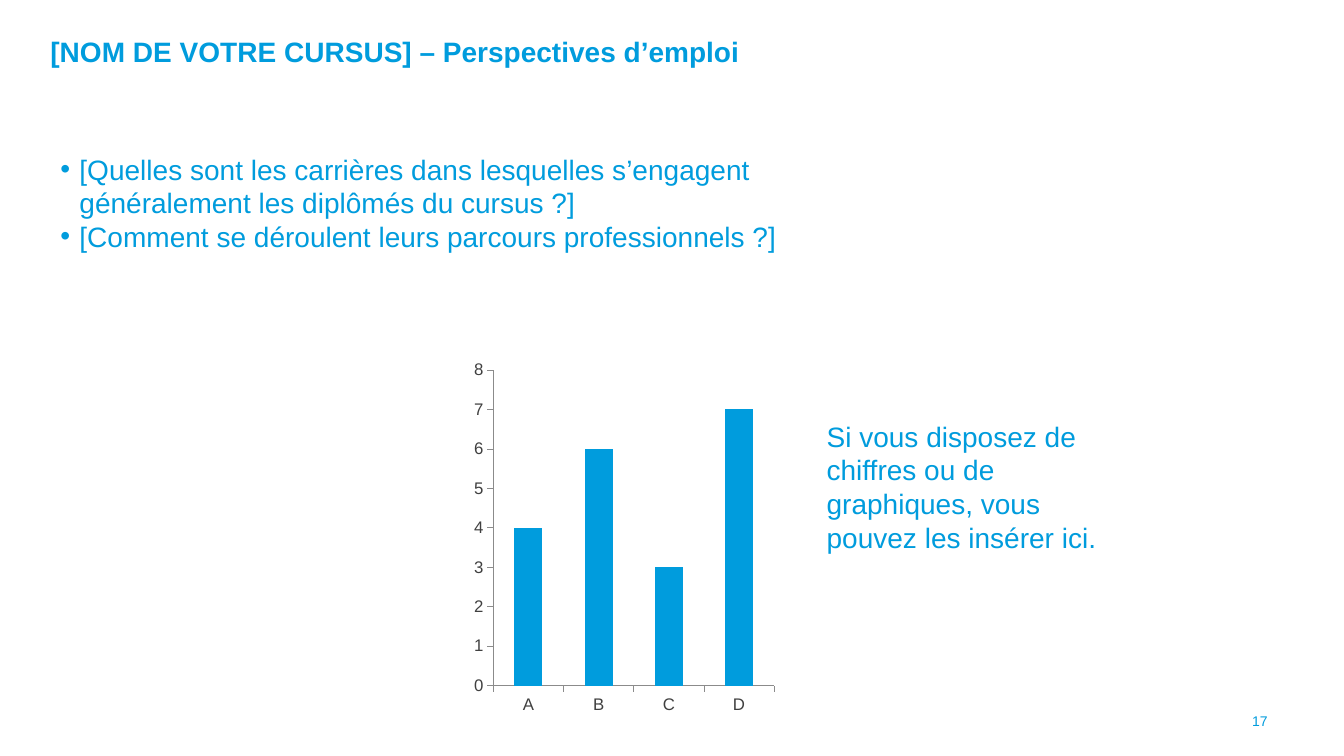
from pptx import Presentation
from pptx.chart.data import CategoryChartData
from pptx.dml.color import RGBColor
from pptx.enum.chart import XL_CHART_TYPE, XL_TICK_MARK
from pptx.enum.text import MSO_ANCHOR, PP_ALIGN
from pptx.oxml.ns import qn
from pptx.util import Inches, Pt
from lxml import etree

COLUMN_STACKED = XL_CHART_TYPE.COLUMN_STACKED
TICK_OUTSIDE = XL_TICK_MARK.OUTSIDE
TOP, MIDDLE = MSO_ANCHOR.TOP, MSO_ANCHOR.MIDDLE
RIGHT = PP_ALIGN.RIGHT

FONT = "Arial"
BLUE = "009CDD"
BLACK = "000000"
LABEL_GREY = "404040"
AXIS_GREY = "8B8B8B"

BULLET_INDENT = Inches(0.19)
EMPLOYMENT_DATA = {"A": 4, "B": 6, "C": 3, "D": 7}


def rgb(color):
    return RGBColor.from_string(color)


def set_font(font, size, color, bold=False):
    for name, value in {"name": FONT, "size": Pt(size), "bold": bold}.items():
        setattr(font, name, value)
    font.color.rgb = rgb(color)


def add_bullet(p):
    """Give a paragraph a hanging blue bullet."""
    pPr = p._p.get_or_add_pPr()
    pPr.set("marL", str(BULLET_INDENT))
    pPr.set("indent", str(-BULLET_INDENT))
    color = etree.SubElement(pPr, qn("a:buClr"))
    etree.SubElement(color, qn("a:srgbClr"), val=BLUE)
    etree.SubElement(pPr, qn("a:buFont"), typeface=FONT)
    etree.SubElement(pPr, qn("a:buChar"), char="•")


def add_text(s, box, lines, size=20, bold=False, bullets=False,
             side_margin=0.1, anchor=TOP, paragraph_format=None):
    tf = s.shapes.add_textbox(*map(Inches, box)).text_frame
    frame_format = {
        "word_wrap": True,
        "vertical_anchor": anchor,
        "margin_left": Inches(side_margin),
        "margin_right": Inches(side_margin),
    }
    for name, value in frame_format.items():
        setattr(tf, name, value)
    for i, line in enumerate(lines):
        p = tf.add_paragraph() if i else tf.paragraphs[0]
        if bullets:
            add_bullet(p)
        for name, value in (paragraph_format or {}).items():
            setattr(p, name, value)
        r = p.add_run()
        r.text = line
        set_font(r.font, size, BLUE, bold)


def style_axis(axis):
    axis_format = {
        "has_major_gridlines": False,
        "major_tick_mark": TICK_OUTSIDE,
    }
    for name, value in axis_format.items():
        setattr(axis, name, value)
    set_font(axis.tick_labels.font, 12, LABEL_GREY)
    axis.format.line.color.rgb = rgb(AXIS_GREY)
    axis.format.line.width = Pt(0.5)


def add_column_chart(s, box, values):
    data = CategoryChartData()
    data.categories = list(values)
    data.add_series("Series 1", list(values.values()))
    chart = s.shapes.add_chart(COLUMN_STACKED, *map(Inches, box), data).chart
    chart.has_legend = False
    chart.has_title = False
    set_font(chart.font, 10, BLACK)
    plot = chart.plots[0]
    plot_format = {"gap_width": 150, "overlap": 100, "vary_by_categories": False}
    for name, value in plot_format.items():
        setattr(plot, name, value)
    fill = plot.series[0].format.fill
    fill.solid()
    fill.fore_color.rgb = rgb(BLUE)
    for axis in (chart.category_axis, chart.value_axis):
        style_axis(axis)


def add_employment_slide(prs):
    s = prs.slides.add_slide(prs.slide_layouts[6])
    add_text(s, (0.5, 0.36, 9.97, 0.38),
             ["[NOM DE VOTRE CURSUS] – Perspectives d’emploi"],
             bold=True, side_margin=0, paragraph_format={"line_spacing": 0.8})
    add_text(s, (0.5, 1.46, 8.27, 1.33),
             ["[Quelles sont les carrières dans lesquelles s’engagent "
              "généralement les diplômés du cursus ?]",
              "[Comment se déroulent leurs parcours professionnels ?]"],
             bullets=True)
    add_column_chart(s, (4.64, 3.51, 3.1, 3.64), EMPLOYMENT_DATA)
    add_text(s, (8.1, 4.11, 2.91, 1.43),
             ["Si vous disposez de chiffres ou de graphiques, "
              "vous pouvez les insérer ici."])
    add_text(s, (9.56, 6.95, 3.11, 0.4), ["17"], size=10, anchor=MIDDLE,
             paragraph_format={"alignment": RIGHT})


def main():
    prs = Presentation()
    prs.slide_width, prs.slide_height = Inches(13.33), Inches(7.5)
    add_employment_slide(prs)
    prs.save("out.pptx")


if __name__ == "__main__":
    main()
